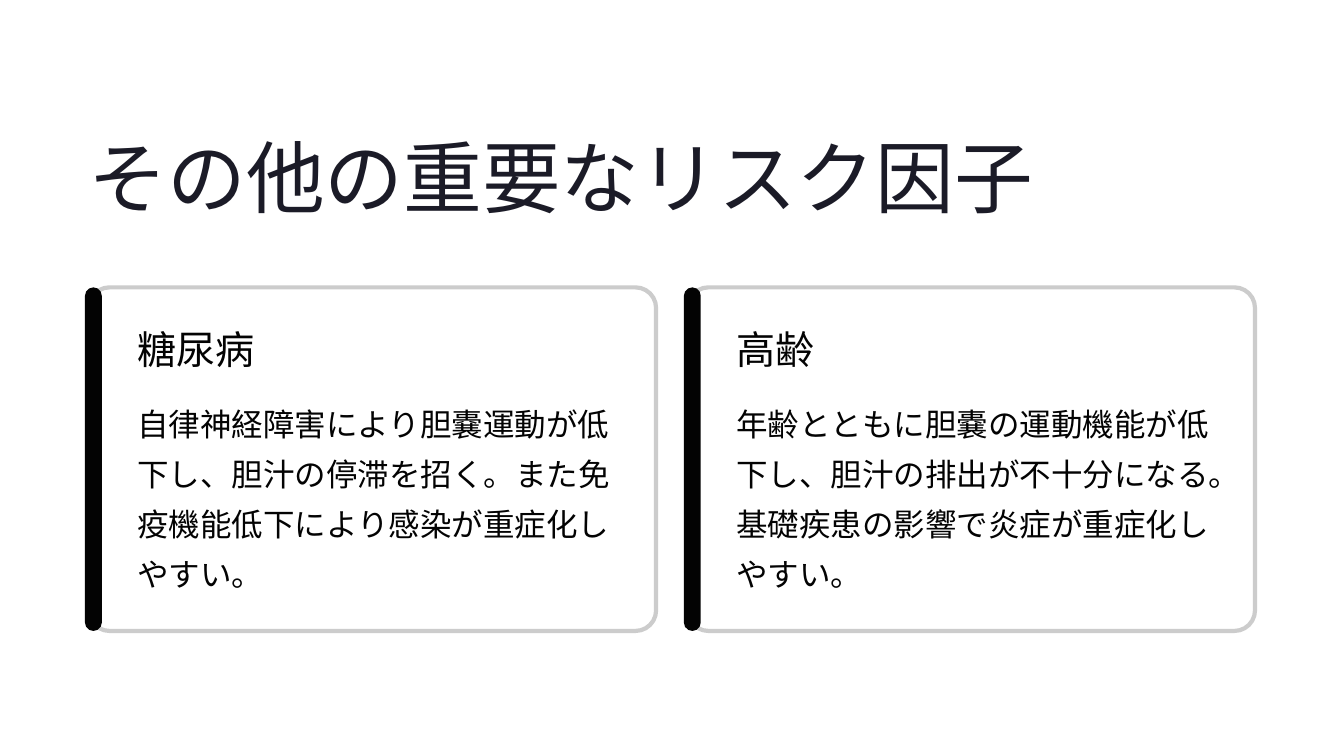
from lxml.etree import SubElement
from pptx import Presentation
from pptx.dml.color import RGBColor
from pptx.enum.shapes import MSO_SHAPE as Shape
from pptx.oxml.ns import qn
from pptx.util import Cm, Pt

INK = RGBColor(0x1B, 0x1B, 0x27)
BLACK = RGBColor(0x03, 0x03, 0x03)
WHITE = RGBColor(0xFF, 0xFF, 0xFF)
GREY = RGBColor(0xCC, 0xCC, 0xCC)

TITLE = "その他の重要なリスク因子"
RISKS = [
    ("糖尿病", "自律神経障害により胆嚢運動が低下し、胆汁の停滞を招く。また免疫機能低下により感染が重症化しやすい。"),
    ("高齢", "年齢とともに胆嚢の運動機能が低下し、胆汁の排出が不十分になる。基礎疾患の影響で炎症が重症化しやすい。"),
]
CARD_LEFT, CARD_TOP, CARD_WIDTH, CARD_HEIGHT = 2.69, 8.69, 17.15, 10.39
CARD_PITCH = 18.11


class RiskSlide:
    """Holds the text styles and the page, and draws each kind of element."""

    styles = {
        "title": ({"name": "Inter", "size": Pt(67.5)}, INK, Pt(84.5), False),
        "heading": ({"name": "Inter", "size": Pt(33.5)}, BLACK, Pt(42), False),
        "body": ({"name": "Karla", "size": Pt(27)}, BLACK, Pt(43), True),
    }

    def __init__(self, deck):
        self.page = deck.slides.add_slide(deck.slide_layouts[6])

    def text(self, wording, style, left, top, width, height):
        font, color, spacing, wrap = self.styles[style]
        box = self.page.shapes.add_textbox(Cm(left), Cm(top), Cm(width), Cm(height))
        frame = box.text_frame
        frame_format = {"margin_left": 0, "margin_top": 0, "margin_right": 0,
                        "margin_bottom": 0, "word_wrap": wrap}
        for name, value in frame_format.items():
            setattr(frame, name, value)
        para = frame.paragraphs[0]
        para.line_spacing = spacing
        span = para.add_run()
        span.text = wording
        for name, value in font.items():
            setattr(span.font, name, value)
        span.font.color.rgb = color

    def panel(self, left, width, rounding, fill, line=None, opacity=100):
        panel = self.page.shapes.add_shape(
            Shape.ROUNDED_RECTANGLE, Cm(left), Cm(CARD_TOP), Cm(width), Cm(CARD_HEIGHT))
        panel.shadow.inherit = False
        panel.adjustments[0] = rounding
        panel.fill.solid()
        panel.fill.fore_color.rgb = fill
        if opacity < 100:
            color = panel.fill._xPr.find(qn("a:solidFill"))[0]
            SubElement(color, qn("a:alpha")).set("val", str(opacity * 1000))
        if line is None:
            panel.line.fill.background()
        else:
            panel.line.color.rgb = line
            panel.line.width = Pt(3.6)

    def card(self, left, heading, body):
        self.panel(left, CARD_WIDTH, 0.06, WHITE, GREY, opacity=95)
        self.panel(left - 0.12, 0.51, 0.5, BLACK)
        self.text(heading, "heading", left + 1.46, 9.78, 11.99, 1.5)
        self.text(body, "body", left + 1.46, 11.86, 14.61, 6.12)


def main():
    deck = Presentation()
    deck.slide_width, deck.slide_height = Cm(40.64), Cm(22.86)
    slide = RiskSlide(deck)
    slide.text(TITLE, "title", CARD_LEFT, 3.78, 28.75, 3)
    for index, (heading, body) in enumerate(RISKS):
        slide.card(CARD_LEFT + index * CARD_PITCH, heading, body)
    deck.save("out.pptx")


if __name__ == "__main__":
    main()
